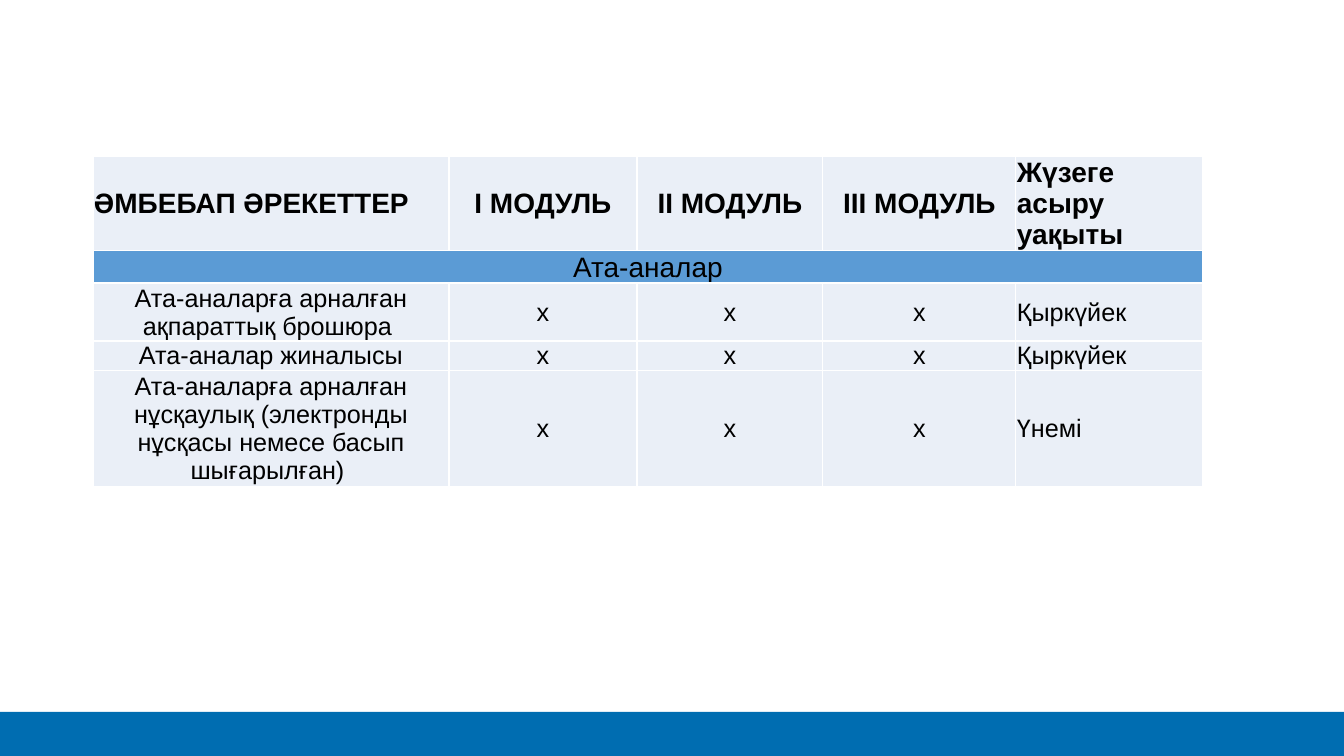
from lxml.etree import SubElement
from pptx import Presentation
from pptx.dml.color import RGBColor
from pptx.enum.shapes import MSO_SHAPE as Shape
from pptx.enum.text import MSO_ANCHOR as Anchor, PP_ALIGN as Align
from pptx.oxml.ns import qn
from pptx.util import Emu, Pt

PAGE_WIDTH, PAGE_HEIGHT = 1344, 756
EMU_PER_PX = 12192000 / PAGE_WIDTH

HEADINGS = ["ӘМБЕБАП ӘРЕКЕТТЕР", "І МОДУЛЬ", "ІІ МОДУЛЬ", "ІІІ МОДУЛЬ", "Жүзеге асыру уақыты"]
SECTION = "Ата-аналар"
ACTIVITIES = [
    ("Ата-аналарға арналған ақпараттық брошюра ", "Қыркүйек"),
    ("Ата-аналар жиналысы", "Қыркүйек"),
    ("Ата-аналарға арналған нұсқаулық (электронды нұсқасы немесе басып шығарылған) ", "Үнемі"),
]
ROWS = [HEADINGS, [SECTION] + [""] * 4]
ROWS += [[activity, "x", "x", "x", time] for activity, time in ACTIVITIES]

TABLE_LEFT, TABLE_TOP = 93, 156
COLUMN_WIDTHS = [356, 188, 186, 193, 187]
ROW_HEIGHTS = [94, 32, 58, 29, 116]
BAR_TOP, BAR_HEIGHT = 712, 47
HEADING_ROW, SECTION_ROW = 0, 1
PALE, BLUE, BAR_BLUE, WHITE, BLACK = "EAEFF7", "5B9BD5", "006DB1", "FFFFFF", "000000"


def px(length):
    return Emu(round(length * EMU_PER_PX))


def paint(fill, color):
    fill.solid()
    fill.fore_color.rgb = RGBColor.from_string(color)


def add_borders(cell, color):
    """Draw a 1 pt line on each side; call before filling the cell."""
    properties = cell._tc.get_or_add_tcPr()
    for side in ("lnL", "lnR", "lnT", "lnB"):
        line = SubElement(properties, qn(f"a:{side}"), w=str(Pt(1)))
        solid = SubElement(line, qn("a:solidFill"))
        SubElement(solid, qn("a:srgbClr"), val=color)


def format_cell(cell, text, row, column):
    add_borders(cell, WHITE)
    paint(cell.fill, BLUE if row == SECTION_ROW else PALE)
    cell.vertical_anchor = Anchor.MIDDLE
    cell.margin_left = cell.margin_right = cell.margin_top = px(1)
    cell.margin_bottom = 0
    cell.text = text
    para = cell.text_frame.paragraphs[0]
    is_left = column == len(HEADINGS) - 1 or (row == HEADING_ROW and column == 0)
    para.alignment = Align.LEFT if is_left else Align.CENTER
    para.font.size = Pt(20 if row <= SECTION_ROW else 18)
    for span in para.runs:
        span.font.name = "Arial"
        span.font.size = para.font.size
        span.font.bold = row == HEADING_ROW
        span.font.color.rgb = RGBColor.from_string(BLACK)


def add_bar(page):
    bar = page.shapes.add_shape(Shape.RECTANGLE, 0, px(BAR_TOP), px(PAGE_WIDTH), px(BAR_HEIGHT))
    bar.shadow.inherit = False
    paint(bar.fill, BAR_BLUE)
    bar.line.fill.background()


def add_schedule(page):
    table = page.shapes.add_table(
        len(ROWS), len(HEADINGS), px(TABLE_LEFT), px(TABLE_TOP),
        px(sum(COLUMN_WIDTHS)), px(sum(ROW_HEIGHTS)),
    ).table
    for column, width in zip(table.columns, COLUMN_WIDTHS):
        column.width = px(width)
    for row, height in zip(table.rows, ROW_HEIGHTS):
        row.height = px(height)
    for row, texts in enumerate(ROWS):
        for column, text in enumerate(texts):
            format_cell(table.cell(row, column), text, row, column)
    table.cell(SECTION_ROW, 0).merge(table.cell(SECTION_ROW, len(HEADINGS) - 1))


def main():
    deck = Presentation()
    deck.slide_width, deck.slide_height = px(PAGE_WIDTH), px(PAGE_HEIGHT)
    page = deck.slides.add_slide(deck.slide_layouts[6])
    add_bar(page)
    add_schedule(page)
    deck.save("out.pptx")


if __name__ == "__main__":
    main()
